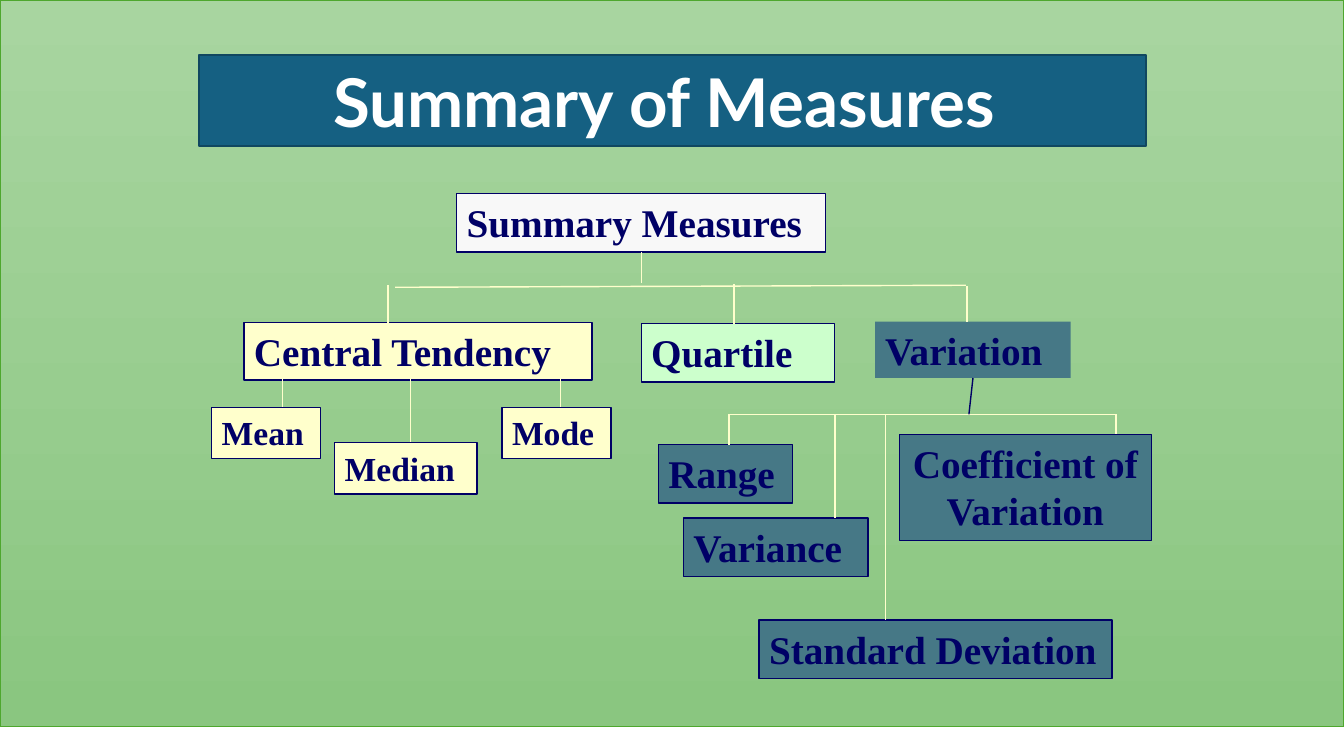
from lxml import etree
from pptx import Presentation
from pptx import util as u
from pptx.dml.color import RGBColor
from pptx.enum import shapes, text
from pptx.oxml.ns import qn

WHITE = RGBColor(0xFF, 0xFF, 0xFF)
NAVY = RGBColor(0x00, 0x00, 0x66)
CREAM = RGBColor(0xFF, 0xFF, 0xCC)
MINT = RGBColor(0xCC, 0xFF, 0xCC)
PALE = RGBColor(0xF8, 0xF8, 0xF8)
SLATE = RGBColor(0x46, 0x78, 0x86)
BLUE = RGBColor(0x15, 0x60, 0x82)
DARK_BLUE = RGBColor(0x10, 0x47, 0x60)
GREEN = RGBColor(0x4E, 0xA7, 0x2E)
LIGHT_LEAF = RGBColor(0xA8, 0xD5, 0xA0)
LEAF = RGBColor(0x8A, 0xC6, 0x80)


def place(shape, left, top, width, height):
    """Move and size a shape, in inches."""
    frame = {"left": left, "top": top, "width": width, "height": height}
    for side, length in frame.items():
        setattr(shape, side, u.Inches(length))


def paint(shape, fill, line, points=1):
    """Give a shape a solid fill and an outline, or no outline."""
    shape.fill.solid()
    shape.fill.fore_color.rgb = fill
    if line is None:
        shape.line.fill.background()
    else:
        shape.line.color.rgb = line
        shape.line.width = u.Pt(points)


def write(shape, words, align, font_format, color):
    """Set a shape's wording and its text format."""
    frame = shape.text_frame
    frame.text = words
    frame.word_wrap = True
    frame.auto_size = text.MSO_AUTO_SIZE.NONE
    frame.vertical_anchor = text.MSO_ANCHOR.TOP
    paragraph = frame.paragraphs[0]
    paragraph.alignment = align
    font = paragraph.runs[0].font
    for name, value in font_format.items():
        setattr(font, name, value)
    font.color.rgb = color


def add_backdrop(slide, box):
    """Lay the green gradient panel behind the title."""
    panel = slide.shapes.add_shape(shapes.MSO_SHAPE.RECTANGLE, *map(u.Inches, box))
    panel.shadow.inherit = False
    panel.fill.gradient()
    panel.fill.gradient_angle = 270
    for stop, color in zip(panel.fill.gradient_stops, (LIGHT_LEAF, LEAF)):
        stop.color.rgb = color
    for stop, position in zip(panel.fill.gradient_stops, (0, 1)):
        stop.position = position
    panel.line.color.rgb = GREEN
    panel.line.width = u.Pt(1)
    slide.shapes.title.element.addprevious(panel.element)


def add_title(slide, box):
    """Format the title placeholder as a blue banner."""
    title = slide.shapes.title
    place(title, *box)
    paint(title, BLUE, DARK_BLUE, 1.5)
    banner_font = {"name": "Lato", "size": u.Pt(48), "bold": True}
    write(title, "Summary of Measures ", text.PP_ALIGN.CENTER, banner_font, WHITE)


def add_measure(slide, origin, words, box, fill, size=28, line=NAVY, align=text.PP_ALIGN.LEFT):
    """Add a labelled box at an offset from the origin."""
    left, top, width, height = box
    measure = slide.shapes.add_shape(shapes.MSO_SHAPE.RECTANGLE, 0, 0, 0, 0)
    measure.shadow.inherit = False
    place(measure, origin[0] + left, origin[1] + top, width, height)
    paint(measure, fill, line)
    label_font = {"name": "Times New Roman", "size": u.Pt(size), "bold": True}
    write(measure, words, align, label_font, NAVY)
    return measure


def add_branch(slide, origin, start, end, color=CREAM):
    """Add a thin line between two offsets from the origin."""
    ends = [u.Inches(base + step) for point in (start, end) for base, step in zip(origin, point)]
    branch = slide.shapes.add_connector(shapes.MSO_CONNECTOR.STRAIGHT, *ends)
    branch.line.color.rgb = color
    branch.line.width = u.Pt(1)
    etree.SubElement(branch.element.spPr, qn("a:effectLst"))
    return branch


def add_overview(slide, origin):
    """Draw the root and its three groups, and return the Variation box."""
    root = add_measure(slide, origin, "Summary Measures", (2.11, 0, 3.66, 0.58), PALE)
    add_measure(slide, origin, "Central Tendency", (0, 1.28, 3.45, 0.57), CREAM)
    add_measure(slide, origin, "Quartile", (3.94, 1.29, 1.92, 0.58), MINT)
    variation = add_measure(slide, origin, "Variation", (6.26, 1.27, 1.94, 0.56), SLATE, line=None)
    add_branch(slide, origin, (3.94, 0.58), (3.94, 0.89)).begin_connect(root, 2)
    add_branch(slide, origin, (1.5, 0.93), (7.16, 0.91))
    for x, top, bottom in ((1.43, 0.91, 1.35), (4.86, 0.9, 1.29), (7.17, 0.92, 1.27)):
        add_branch(slide, origin, (x, top), (x, bottom))
    return variation


def add_central_tendency(slide, origin):
    """Draw the measures of central tendency under their group."""
    for words, left, top, width, stem in (
        ("Mean", 0, 0.28, 1.08, 0.7),
        ("Median", 1.22, 0.63, 1.41, 1.97),
        ("Mode", 2.88, 0.28, 1.08, 3.46),
    ):
        add_measure(slide, origin, words, (left, top, width, 0.51), CREAM, 24)
        add_branch(slide, origin, (stem, 0), (stem, top))


def add_variation(slide, origin, group):
    """Draw the measures of variation under their group."""
    bar = 0.36
    for words, left, top, width, height, stem, align in (
        ("Range", 0, 0.66, 1.33, 0.58, 0.7, text.PP_ALIGN.LEFT),
        ("Variance", 0.25, 1.39, 1.83, 0.58, 1.75, text.PP_ALIGN.LEFT),
        ("Standard Deviation", 1, 2.4, 3.5, 0.58, 2.25, text.PP_ALIGN.LEFT),
        ("Coefficient of Variation", 2.39, 0.56, 2.5, 1.05, 4.54, text.PP_ALIGN.CENTER),
    ):
        add_measure(slide, origin, words, (left, top, width, height), SLATE, align=align)
        add_branch(slide, origin, (stem, bar), (stem, top))
    add_branch(slide, origin, (0.7, bar), (4.55, bar))
    add_branch(slide, origin, (3.12, 0), (3.08, bar), NAVY).begin_connect(group, 2)


def main():
    """Build the slide and save it."""
    deck = Presentation()
    deck.slide_width, deck.slide_height = u.Inches(13.33), u.Inches(7.5)
    slide = deck.slides.add_slide(deck.slide_layouts[5])
    add_backdrop(slide, (0, 0, 13.33, 7.21))
    add_title(slide, (1.97, 0.55, 9.4, 0.9))
    variation = add_overview(slide, (2.42, 1.92))
    add_central_tendency(slide, (2.1, 3.76))
    add_variation(slide, (6.53, 3.75), variation)
    deck.save("out.pptx")


if __name__ == "__main__":
    main()
